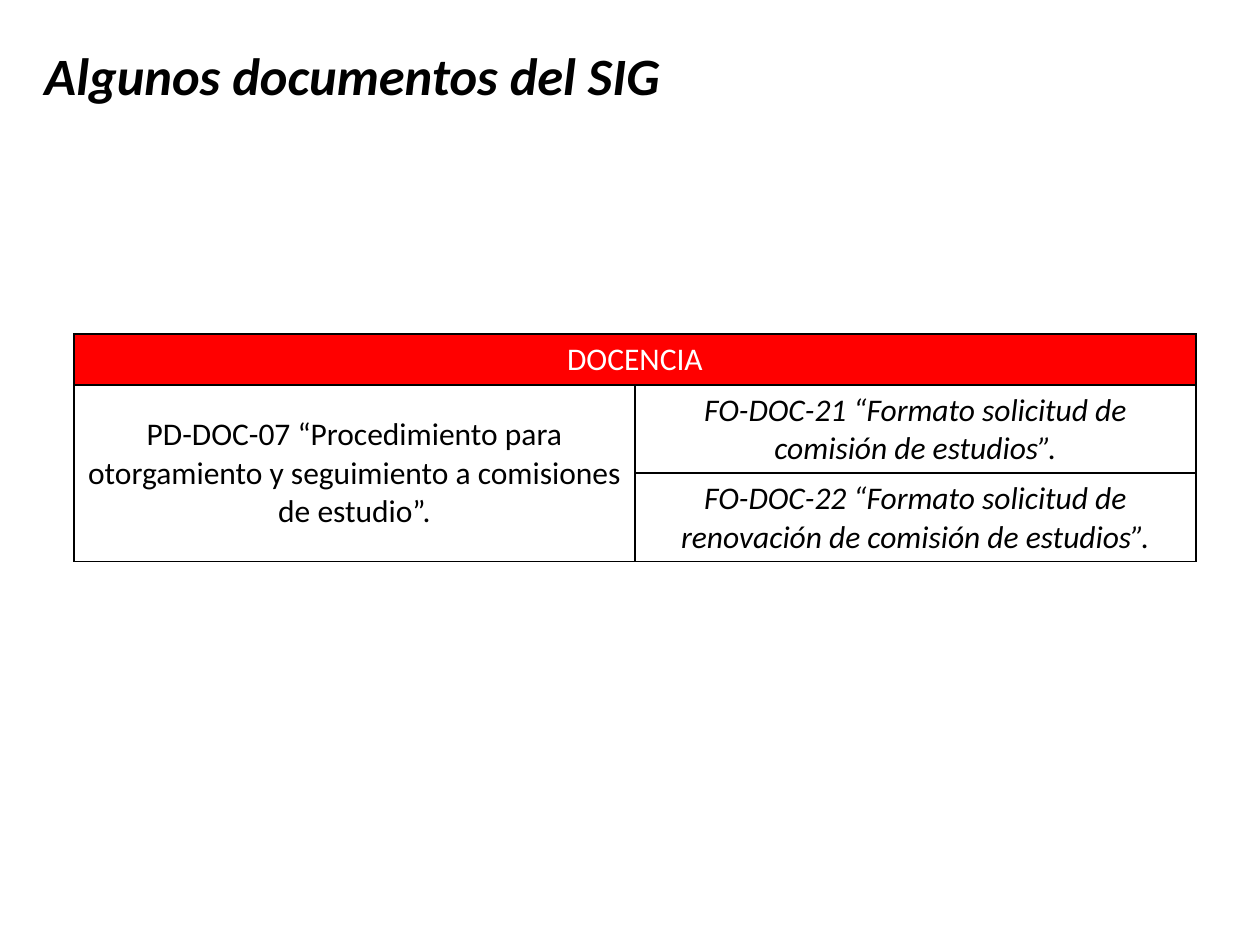
"""Build a slide that lists the teaching documents of the SIG."""
from dataclasses import dataclass

from lxml import etree
from pptx import Presentation
from pptx.dml.color import RGBColor
from pptx.enum.text import MSO_ANCHOR, MSO_AUTO_SIZE, PP_ALIGN
from pptx.oxml.ns import qn
from pptx.util import Pt

CENTER = PP_ALIGN.CENTER
TOP = MSO_ANCHOR.TOP
MIDDLE = MSO_ANCHOR.MIDDLE
GROW = MSO_AUTO_SIZE.SHAPE_TO_FIT_TEXT
EMU_PER_PX = 914400 / 126
BORDER_SIDES = ("a:lnL", "a:lnR", "a:lnT", "a:lnB")


@dataclass(frozen=True)
class Theme:
    font: str = "Calibri"
    title_size: int = 30
    body_size: int = 18
    border_width: int = 1
    ink: str = "000000"
    paper: str = "FFFFFF"
    header: str = "FF0000"


@dataclass(frozen=True)
class Entry:
    text: str
    row: int
    column: int
    last_row: int
    last_column: int
    header: bool = False
    italic: bool = False


def px(length):
    return round(length * EMU_PER_PX)


class SlideBuilder:
    def __init__(self, presentation, theme):
        self.theme = theme
        self.slide = presentation.slides.add_slide(presentation.slide_layouts[6])

    def add_text(self, text_frame, text, size, color, bold=False, italic=False):
        paragraph = text_frame.paragraphs[0]
        paragraph.alignment = CENTER
        run = paragraph.add_run()
        run.text = text
        run.font.name = self.theme.font
        run.font.size = Pt(size)
        run.font.bold = bold
        run.font.italic = italic
        run.font.color.rgb = RGBColor.from_string(color)

    def title(self, text, left, top, width, height):
        shape = self.slide.shapes.add_textbox(px(left), px(top), px(width), px(height))
        shape.text_frame.word_wrap = True
        shape.text_frame.auto_size = GROW
        self.add_text(shape.text_frame, text, self.theme.title_size, self.theme.ink, True, True)

    def border(self, cell):
        properties = cell._tc.get_or_add_tcPr()
        for position, side in enumerate(BORDER_SIDES):
            line = etree.Element(qn(side), w=str(Pt(self.theme.border_width)))
            fill = etree.SubElement(line, qn("a:solidFill"))
            etree.SubElement(fill, qn("a:srgbClr"), val=self.theme.ink)
            properties.insert(position, line)

    def table(self, entries, left, top, column_widths, row_heights):
        frame = self.slide.shapes.add_table(
            len(row_heights), len(column_widths), px(left), px(top),
            px(sum(column_widths)), px(sum(row_heights)))
        table = frame.table
        for column, width in zip(table.columns, column_widths):
            column.width = px(width)
        for row, height in zip(table.rows, row_heights):
            row.height = px(height)
        for cell in table.iter_cells():
            cell.fill.solid()
            cell.fill.fore_color.rgb = RGBColor.from_string(self.theme.paper)
            self.border(cell)
        for entry in entries:
            self.entry(table, entry)

    def entry(self, table, entry):
        cell = table.cell(entry.row, entry.column)
        last_cell = table.cell(entry.last_row, entry.last_column)
        if (entry.row, entry.column) != (entry.last_row, entry.last_column):
            cell.merge(last_cell)
        cell.vertical_anchor = TOP if entry.header else MIDDLE
        if entry.header:
            cell.fill.fore_color.rgb = RGBColor.from_string(self.theme.header)
        color = self.theme.paper if entry.header else self.theme.ink
        self.add_text(cell.text_frame, entry.text, self.theme.body_size, color,
                      italic=entry.italic)


def main():
    presentation = Presentation()
    presentation.slide_width = px(1260)
    presentation.slide_height = px(945)
    builder = SlideBuilder(presentation, Theme())
    builder.title("Algunos documentos del SIG", 25, 37, 655, 77)
    entries = [
        Entry("DOCENCIA", 0, 0, 0, 1, header=True),
        Entry("PD-DOC-07 “Procedimiento para otorgamiento y seguimiento "
              "a comisiones de estudio”.", 1, 0, 2, 0),
        Entry("FO-DOC-21 “Formato solicitud de comisión de estudios”.",
              1, 1, 1, 1, italic=True),
        Entry("FO-DOC-22 “Formato solicitud de renovación de comisión de estudios”.",
              2, 1, 2, 1, italic=True),
    ]
    builder.table(entries, 74, 334, [561, 561], [51, 88, 88])
    presentation.save("out.pptx")


if __name__ == "__main__":
    main()
